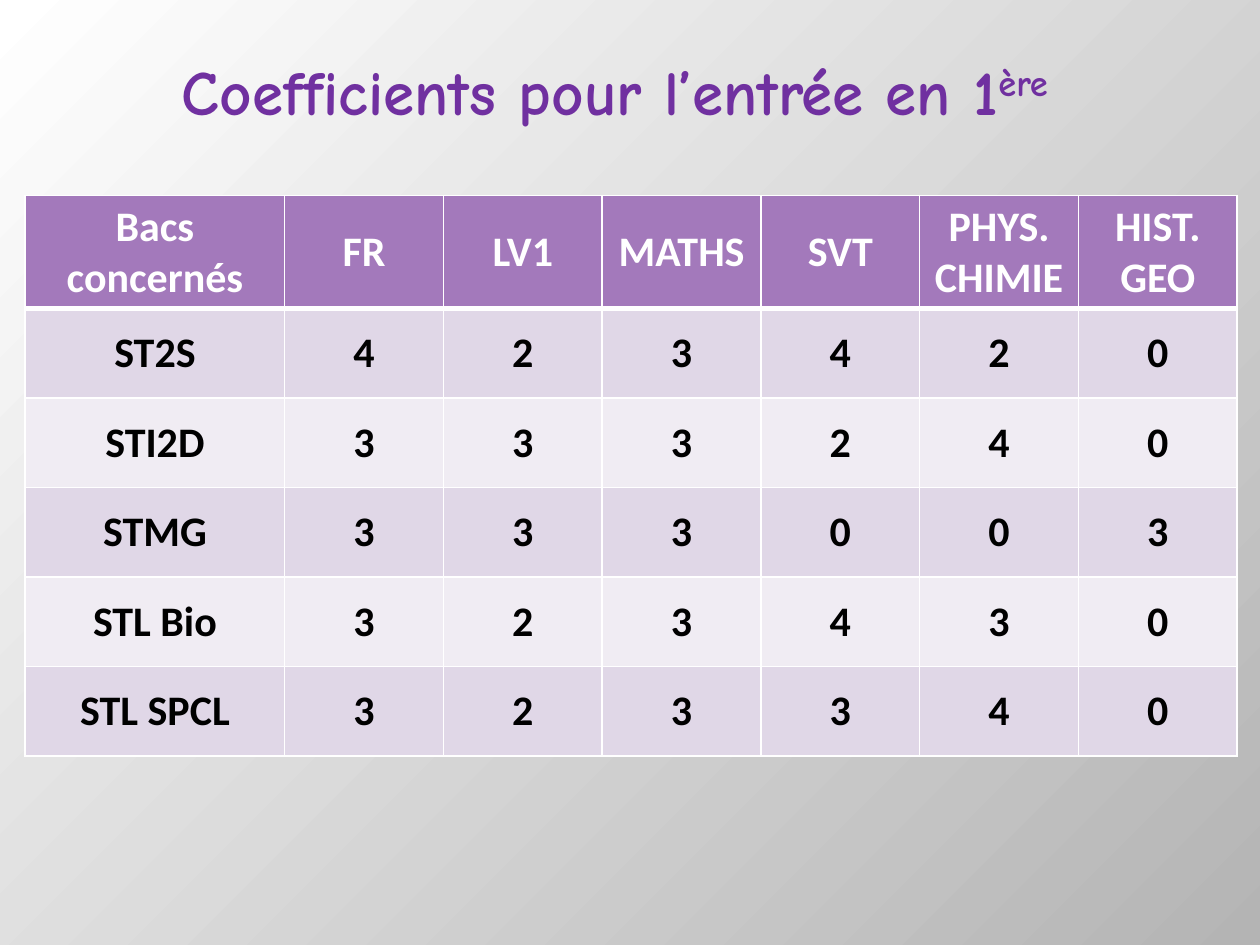
from lxml import etree
from pptx import Presentation
from pptx.dml.color import RGBColor
from pptx.enum.text import MSO_ANCHOR as Anchor, MSO_AUTO_SIZE as AutoSize, PP_ALIGN as Align
from pptx.oxml import parse_xml
from pptx.oxml.ns import nsdecls, qn
from pptx.util import Inches, Pt

WHITE = RGBColor(0xFF, 0xFF, 0xFF)
GREY = RGBColor(0xB4, 0xB4, 0xB4)
BLACK = RGBColor(0x00, 0x00, 0x00)
PURPLE = RGBColor(0x70, 0x30, 0xA0)
HEADER_FILL = RGBColor(0xA3, 0x79, 0xBB)
BAND_FILLS = [RGBColor(0xF0, 0xEC, 0xF3), RGBColor(0xE0, 0xD7, 0xE7)]

ROWS = [
    ["Bacs concernés", "FR", "LV1", "MATHS", "SVT", "PHYS.\nCHIMIE", "HIST.\nGEO"],
    ["ST2S", 4, 2, 3, 4, 2, 0],
    ["STI2D", 3, 3, 3, 2, 4, 0],
    ["STMG", 3, 3, 3, 0, 0, 3],
    ["STL Bio", 3, 2, 3, 4, 3, 0],
    ["STL SPCL", 3, 2, 3, 3, 4, 0],
]


def format_font(font, **values):
    color = values.pop("color")
    for name, value in values.items():
        setattr(font, name, value)
    font.color.rgb = color


def add_borders(cell, widths):
    properties = cell._tc.get_or_add_tcPr()
    for position, (side, width) in enumerate(widths.items()):
        properties.insert(position, parse_xml(
            f'<a:{side} {nsdecls("a")} w="{Pt(width)}"><a:solidFill>'
            f'<a:srgbClr val="{WHITE}"/></a:solidFill></a:{side}>'))


deck = Presentation()
deck.slide_width, deck.slide_height = Inches(10), Inches(7.5)
page = deck.slides.add_slide(deck.slide_layouts[5])

# Background: gradient spreading from the top left corner
backdrop = page.background.fill
backdrop.gradient()
for stop, position, color in zip(backdrop.gradient_stops, (0, 1), (WHITE, GREY)):
    stop.position = position
    stop.color.rgb = color
gradient = page.background._cSld.find(".//" + qn("a:gradFill"))
gradient.remove(gradient.find(qn("a:lin")))
circle = etree.SubElement(gradient, qn("a:path"), {"path": "circle"})
etree.SubElement(circle, qn("a:fillToRect"), {"r": "100000", "b": "100000"})

# Title with a superscript ending
title = page.shapes.title
title.left, title.top = Inches(0.51), Inches(0.36)
title.width, title.height = Inches(8.74), Inches(0.71)
title.text_frame.word_wrap = True
title.text_frame.auto_size = AutoSize.SHAPE_TO_FIT_TEXT
para = title.text_frame.paragraphs[0]
para.alignment = Align.CENTER
for text in ("Coefficients pour l’entrée en 1", "ère"):
    span = para.add_run()
    span.text = text
    format_font(span.font, name="Comic Neue", size=Pt(36), bold=True, color=PURPLE)
span.font._element.set("baseline", "30000")

# Coefficient table
table = page.shapes.add_table(len(ROWS), len(ROWS[0]), Inches(0.2), Inches(1.55),
                              Inches(9.62), Inches(4.45)).table
for index, column in enumerate(table.columns):
    column.width = Inches(1.26 if index else 2.06)
for index, row in enumerate(table.rows):
    row.height = Inches(0.71 if index else 0.89)

for row_index, values in enumerate(ROWS):
    is_header = row_index == 0
    for column_index, value in enumerate(values):
        cell = table.cell(row_index, column_index)
        cell.text = str(value)
        cell.vertical_anchor = Anchor.MIDDLE
        cell.fill.solid()
        cell.fill.fore_color.rgb = HEADER_FILL if is_header else BAND_FILLS[row_index % 2]
        add_borders(cell, {"lnL": 1, "lnR": 1, "lnT": 3 if row_index == 1 else 1,
                           "lnB": 3 if is_header else 1})
        for para in cell.text_frame.paragraphs:
            para.alignment = Align.CENTER
            format_font(para.runs[0].font, name="Calibri", size=Pt(24), bold=True,
                        color=WHITE if is_header else BLACK)

deck.save("out.pptx")
